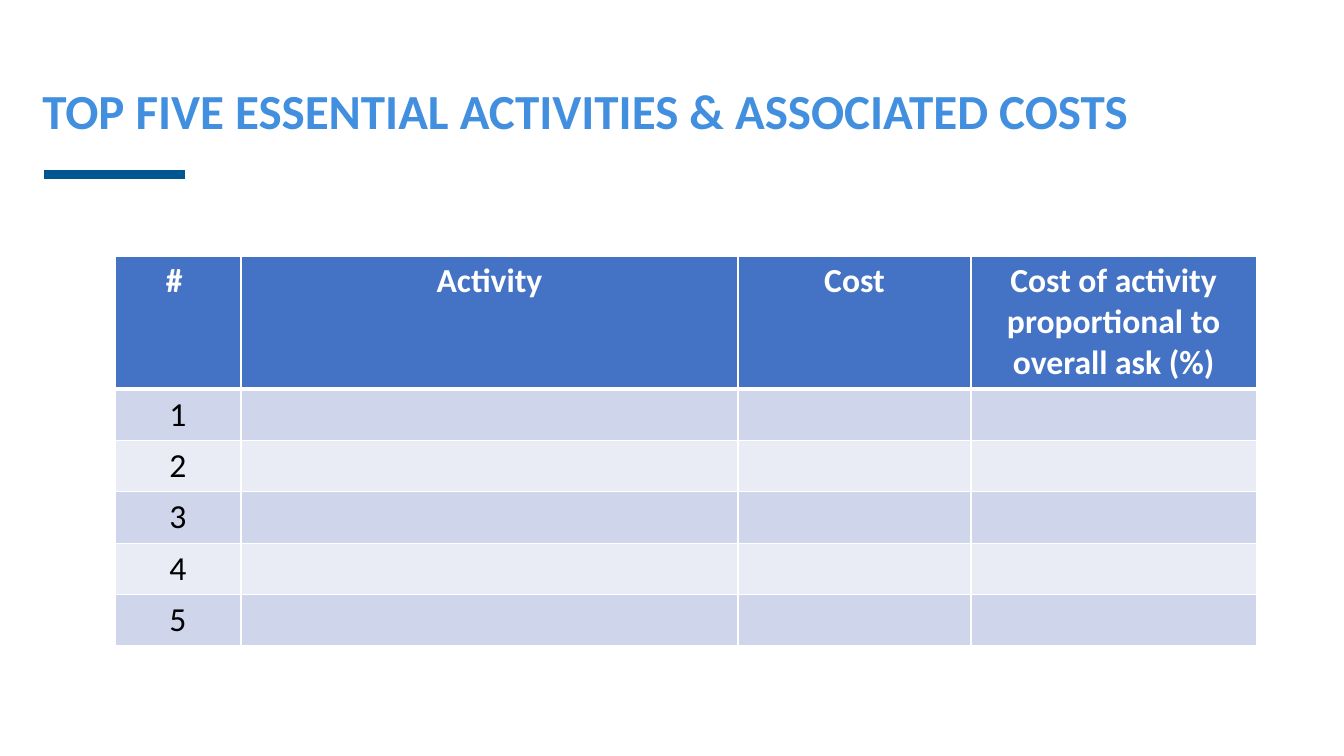
from lxml.etree import SubElement
from pptx import Presentation
from pptx.dml.color import RGBColor
from pptx.enum.shapes import MSO_CONNECTOR
from pptx.enum.text import MSO_ANCHOR, PP_ALIGN
from pptx.oxml.ns import qn
from pptx.util import Inches, Pt

HEADS = ["# ", "Activity", "Cost", "Cost of activity proportional to overall ask (%)"]
WIDTHS = [1.25, 4.93, 2.31, 2.83]
BANDS = ["CFD5EA", "E9EBF5"]
COUNT = 5
HEAD_H = 1.32
ROW_H = 0.51


def paint(color, value):
    color.rgb = RGBColor.from_string(value)


def style(para, size, value, bold):
    for run in para.runs:
        font = run.font
        font.name = "Calibri"
        font.size = Pt(size)
        font.bold = bold
        paint(font.color, value)


def add_title(slide, text):
    box = slide.shapes.add_textbox(Inches(0.42), Inches(0.68), Inches(12.49), Inches(0.9))
    frame = box.text_frame
    frame.word_wrap = True
    frame.margin_left = Inches(0)
    frame.vertical_anchor = MSO_ANCHOR.MIDDLE
    frame.text = text
    para = frame.paragraphs[0]
    para.line_spacing = 0.9
    style(para, 35, "418FDE", True)


def add_rule(slide):
    y = Inches(1.73)
    rule = slide.shapes.add_connector(
        MSO_CONNECTOR.STRAIGHT, Inches(0.44), y, Inches(1.83), y)
    rule.line.width = Pt(6)
    paint(rule.line.color, "005691")
    SubElement(rule._element.spPr, qn("a:effectLst"))


def add_edge(cell, side, width):
    props = cell._tc.get_or_add_tcPr()
    edge = SubElement(props, qn(f"a:ln{side}"), w=str(Pt(width)))
    fill = SubElement(edge, qn("a:solidFill"))
    SubElement(fill, qn("a:srgbClr"), val="FFFFFF")


def set_cell(cell, text, fill, ink, row):
    for side in "LRTB":
        thick = (row == 0 and side == "B") or (row == 1 and side == "T")
        add_edge(cell, side, 3 if thick else 1)
    cell.fill.solid()
    paint(cell.fill.fore_color, fill)
    if text:
        cell.text_frame.text = text
        para = cell.text_frame.paragraphs[0]
        para.alignment = PP_ALIGN.CENTER
        style(para, 24, ink, row == 0)


def add_costs(slide):
    rows = [HEADS] + [[str(n), "", "", ""] for n in range(1, COUNT + 1)]
    table = slide.shapes.add_table(
        len(rows), len(HEADS), Inches(1.14), Inches(2.54),
        Inches(sum(WIDTHS)), Inches(HEAD_H + COUNT * ROW_H)).table
    for col, width in zip(table.columns, WIDTHS):
        col.width = Inches(width)
    for r, texts in enumerate(rows):
        table.rows[r].height = Inches(ROW_H if r else HEAD_H)
        fill = BANDS[(r - 1) % 2] if r else "4472C4"
        ink = "000000" if r else "FFFFFF"
        for c, text in enumerate(texts):
            set_cell(table.cell(r, c), text, fill, ink, r)


def main():
    deck = Presentation()
    deck.slide_width = Inches(13.33)
    deck.slide_height = Inches(7.5)
    slide = deck.slides.add_slide(deck.slide_layouts[6])
    add_title(slide, "TOP FIVE ESSENTIAL ACTIVITIES & ASSOCIATED COSTS")
    add_rule(slide)
    add_costs(slide)
    deck.save("out.pptx")


if __name__ == "__main__":
    main()
